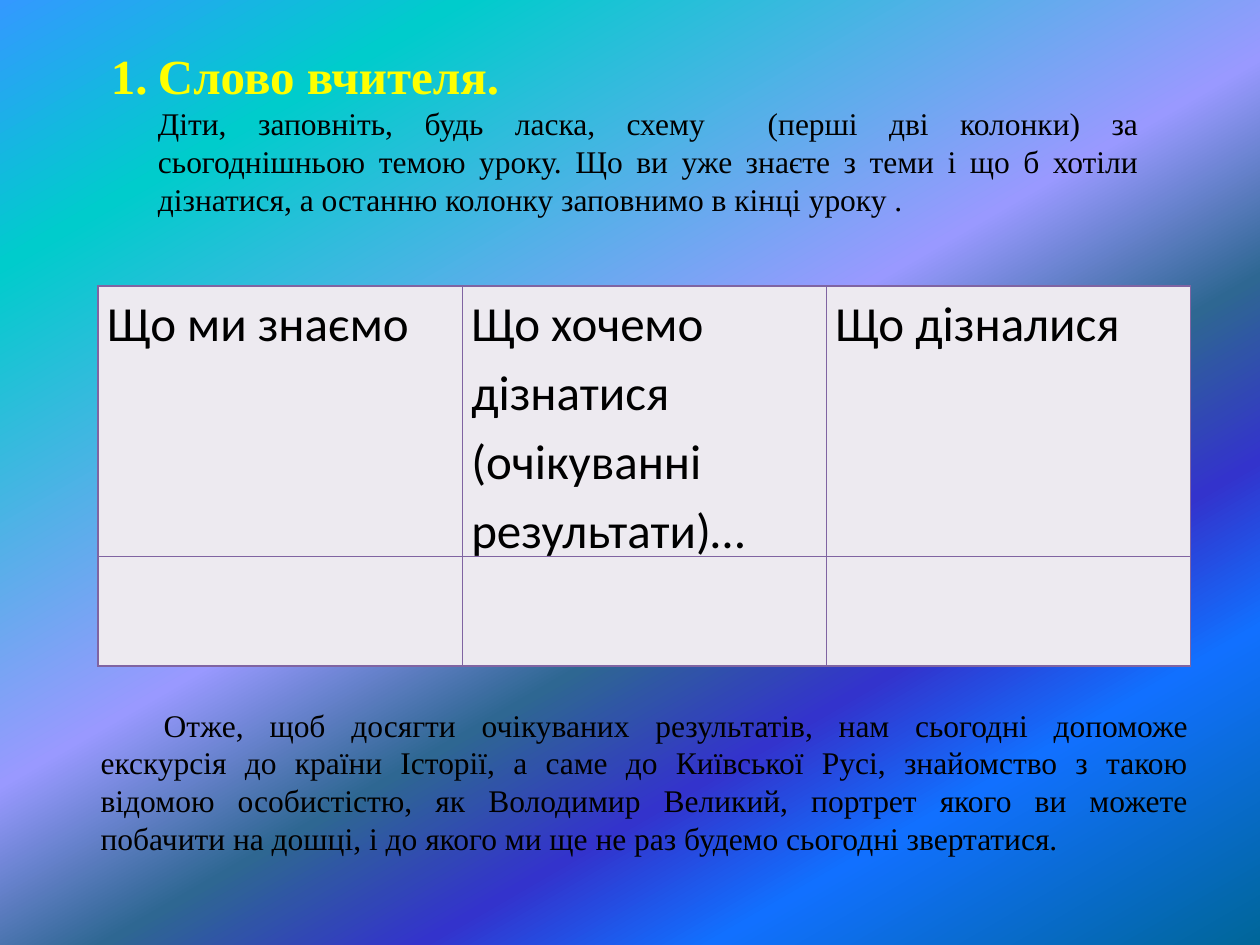
from dataclasses import dataclass

from lxml import etree
from pptx import Presentation
from pptx import util as u
from pptx.dml.color import RGBColor
from pptx.enum import text
from pptx.oxml.ns import qn

SERIF, SANS = "Times New Roman", "Calibri"
BLACK, YELLOW, CELL_FILL, BORDER = "000000", "FFFF00", "EDEAF0", "8064A2"
HANGING = u.Cm(0.95)
BACKDROP = [(0, "3399FF"), (16, "00CCCC"), (47, "9999FF"), (60, "2E6792"),
            (71, "3333CC"), (81, "1170FF"), (100, "006699")]
HEADINGS = ["Що ми знаємо", "Що хочемо дізнатися (очікуванні результати)…",
            "Що дізналися"]
ROW_HEIGHTS = [u.Cm(4.4), u.Cm(2.2)]


@dataclass
class Box:
    left: float
    top: float
    width: float
    height: float

    def lengths(self) -> list:
        return [u.Cm(n) for n in (self.left, self.top, self.width, self.height)]


@dataclass
class Style:
    size: int
    font: str = SERIF
    color: str = BLACK
    bold: bool = False
    align: text.PP_ALIGN = text.PP_ALIGN.LEFT


def rgb(value: str) -> RGBColor:
    return RGBColor.from_string(value)


def write(paragraph, wording: str, style: Style) -> None:
    paragraph.text = wording
    paragraph.alignment = style.align
    font = paragraph.font
    font.name, font.size, font.bold = style.font, u.Pt(style.size), style.bold
    font.color.rgb = rgb(style.color)


def add_stop(parent, tag: str, color: str, **attributes: str):
    child = etree.SubElement(parent, qn(tag), attributes)
    etree.SubElement(child, qn("a:srgbClr"), val=color)
    return child


def paint_background(slide) -> None:
    fill = slide.background.fill
    fill.gradient()
    fill.gradient_angle = 300  # counter-clockwise
    stops = slide.element.find(".//" + qn("a:gsLst"))
    for stop in list(stops):
        stops.remove(stop)
    for percent, color in BACKDROP:
        add_stop(stops, "a:gs", color, pos=str(percent * 1000))


def hang(paragraph, marker: str, **attributes: str) -> None:
    properties = paragraph._p.get_or_add_pPr()
    properties.set("marL", str(HANGING))
    properties.set("indent", str(-HANGING))
    etree.SubElement(properties, qn(marker), attributes)


def format_cell(cell) -> None:
    cell.margin_left = cell.margin_right = u.Cm(0.18)
    cell.margin_top = cell.margin_bottom = 0
    properties = cell._tc.get_or_add_tcPr()
    for side in ("a:lnL", "a:lnR", "a:lnT", "a:lnB"):
        line = etree.SubElement(properties, qn(side), w=str(u.Pt(1)))
        add_stop(line, "a:solidFill", BORDER)
    cell.fill.solid()
    cell.fill.fore_color.rgb = rgb(CELL_FILL)


def add_scheme(slide, box: Box) -> None:
    scheme = slide.shapes.add_table(len(ROW_HEIGHTS), len(HEADINGS),
                                    *box.lengths()).table
    scheme.first_row = scheme.horz_banding = False
    for row, height in zip(scheme.rows, ROW_HEIGHTS):
        row.height = height
    for cell in scheme.iter_cells():
        format_cell(cell)
    for column, heading in enumerate(HEADINGS):
        paragraph = scheme.cell(0, column).text_frame.paragraphs[0]
        write(paragraph, heading, Style(28, SANS))
        paragraph.line_spacing = 1.15
        paragraph.space_before = u.Pt(9)


def add_task(slide, box: Box) -> None:
    task = slide.placeholders[1]
    task.left, task.top, task.width, task.height = box.lengths()
    frame = task.text_frame
    frame.auto_size = text.MSO_AUTO_SIZE.SHAPE_TO_FIT_TEXT
    heading, instruction = frame.paragraphs[0], frame.add_paragraph()
    write(heading, "Слово вчителя.", Style(28, color=YELLOW, bold=True))
    write(instruction,
          "\tДіти, заповніть, будь ласка, схему  (перші дві колонки) за "
          "сьогоднішньою темою уроку. Що ви уже знаєте з теми і що б хотіли "
          "дізнатися, а останню колонку заповнимо в кінці уроку .",
          Style(18, align=text.PP_ALIGN.JUSTIFY))
    for paragraph in frame.paragraphs:
        paragraph.space_before = 0
    # Number the heading only
    properties = heading._p.get_or_add_pPr()
    etree.SubElement(properties, qn("a:buFont"), typeface="+mj-lt")
    hang(heading, "a:buAutoNum", type="arabicPeriod")
    hang(instruction, "a:buNone")
    for paragraph in frame.paragraphs:
        # Run defaults come last in the paragraph properties
        properties = paragraph._p.get_or_add_pPr()
        properties.append(properties.find(qn("a:defRPr")))
        # Runs in a placeholder take their look from run properties
        for run in paragraph.runs:
            run.font.name = paragraph.font.name
            run.font.size = paragraph.font.size
            run.font.bold = paragraph.font.bold
            run.font.color.rgb = paragraph.font.color.rgb


def add_conclusion(slide, box: Box) -> None:
    frame = slide.shapes.add_textbox(*box.lengths()).text_frame
    frame.word_wrap = True
    frame.auto_size = text.MSO_AUTO_SIZE.SHAPE_TO_FIT_TEXT
    write(frame.paragraphs[0],
          "\tОтже, щоб досягти очікуваних результатів, нам сьогодні допоможе "
          "екскурсія до країни Історії, а саме до Київської Русі, знайомство з "
          "такою відомою особистістю, як Володимир Великий, портрет якого ви "
          "можете побачити на дошці, і до якого ми ще не раз будемо сьогодні "
          "звертатися.",
          Style(18, align=text.PP_ALIGN.JUSTIFY))


def main() -> None:
    deck = Presentation()
    deck.slide_width, deck.slide_height = u.Cm(25.4), u.Cm(19.05)
    slide = deck.slides.add_slide(deck.slide_layouts[1])
    title = slide.shapes.title.element
    title.getparent().remove(title)

    paint_background(slide)
    add_scheme(slide, Box(1.98, 5.77, 22.02, 6.6))
    add_conclusion(slide, Box(1.78, 14.1, 22.43, 3.33))
    add_task(slide, Box(1.98, 0.79, 21.23, 3.76))
    deck.save("out.pptx")


if __name__ == "__main__":
    main()
